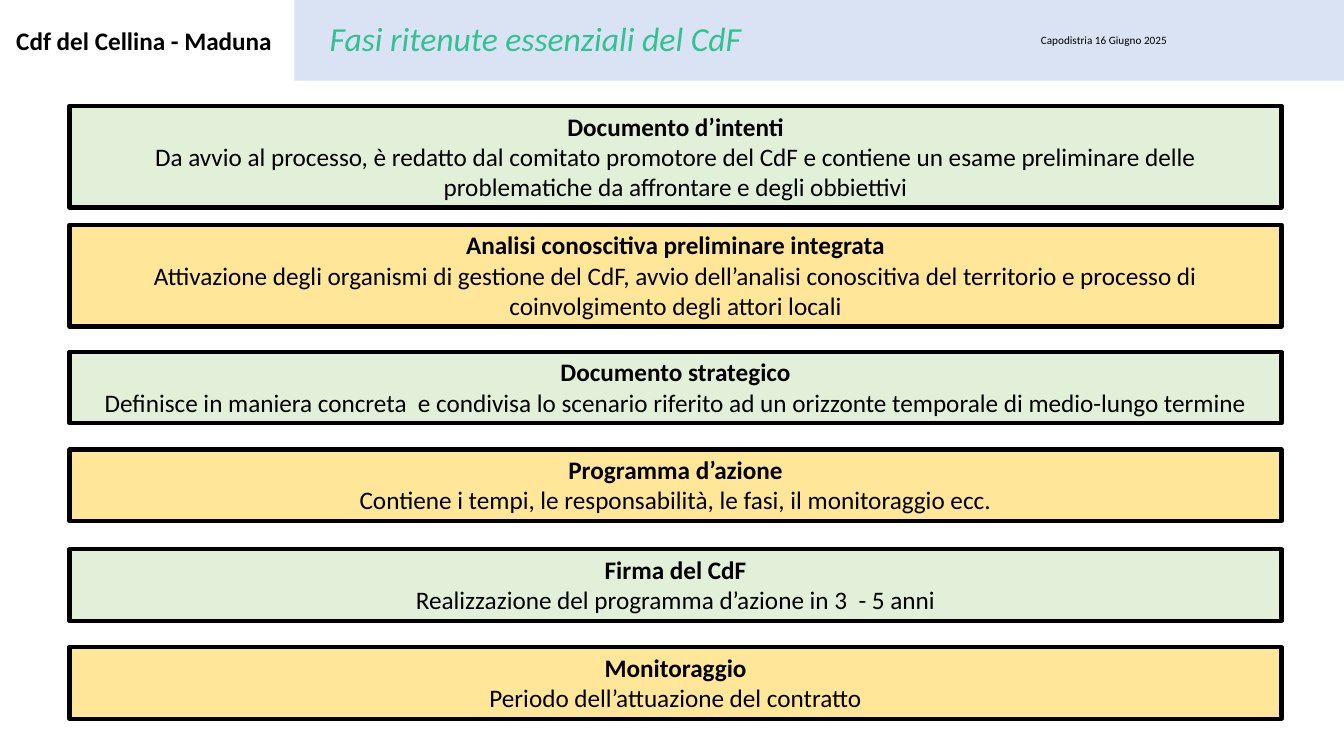
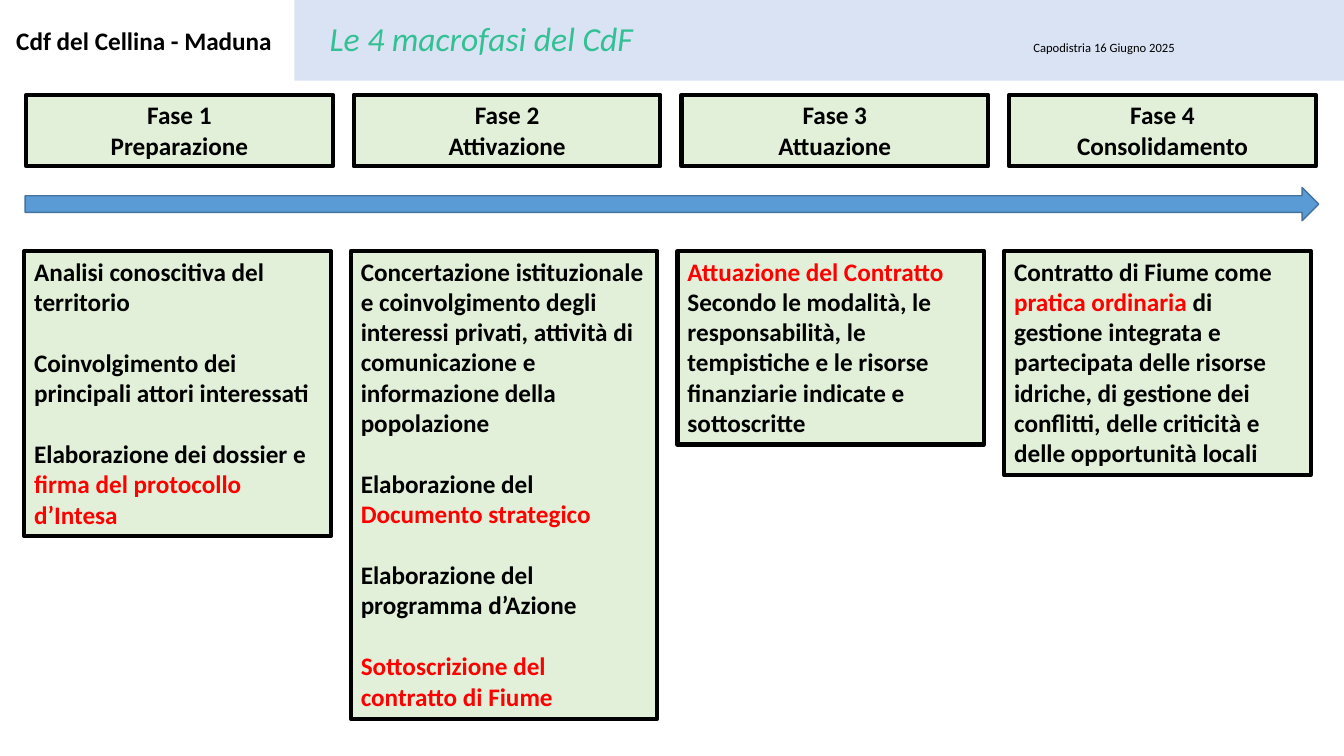
from dataclasses import dataclass
from typing import NamedTuple

from pptx import Presentation
from pptx.dml.color import RGBColor
from pptx.enum.shapes import MSO_SHAPE as SHAPE
from pptx.enum.text import MSO_ANCHOR as ANCHOR, MSO_AUTO_SIZE as AUTO, PP_ALIGN as ALIGN
from pptx.util import Inches, Pt

FONT = "Calibri"
BLACK = "000000"
RED = "FF0000"
TEAL = "32C094"
BAND = "DAE3F3"
GREEN = "E2F0D9"
YELLOW = "FFE699"
ARROW = "5B9BD5"
ARROW_EDGE = "43739E"

BAND_LEFT, BAND_SPLIT, BAND_RIGHT, BAND_HEIGHT = 2.92, 8.57, 13.33, 0.8
PHASE_WIDTH = 3.04
BLANK_LINE = 22


class Run(NamedTuple):
    text: str
    color: str = BLACK
    bold: bool = True


class Box(NamedTuple):
    left: float
    top: float
    width: float
    height: float


@dataclass
class Step:
    top: float
    height: float
    title: str
    detail: str


@dataclass
class Phase:
    name: str
    height: float
    paragraphs: list[list[Run]]
    gap: float = 0


STEPS = [
    Step(1.05, 1.01, "Documento d’intenti",
         "Da avvio al processo, è redatto dal comitato promotore del CdF e contiene "
         "un esame preliminare delle problematiche da affrontare e degli obbiettivi"),
    Step(2.23, 1.01, "Analisi conoscitiva preliminare integrata",
         "Attivazione degli organismi di gestione del CdF, avvio dell’analisi conoscitiva "
         "del territorio e processo di coinvolgimento degli attori locali"),
    Step(3.49, 0.71, "Documento strategico",
         "Definisce in maniera concreta  e condivisa lo scenario riferito ad un orizzonte "
         "temporale di medio-lungo termine"),
    Step(4.46, 0.71, "Programma d’azione",
         "Contiene i tempi, le responsabilità, le fasi, il monitoraggio ecc."),
    Step(5.45, 0.71, "Firma del CdF", "Realizzazione del programma d’azione in 3  - 5 anni"),
    Step(6.42, 0.71, "Monitoraggio", "Periodo dell’attuazione del contratto"),
]

PHASES = [
    Phase("Preparazione", 2.83, [
        [Run("Analisi conoscitiva del territorio")],
        [Run("Coinvolgimento dei principali attori interessati")],
        [Run("Elaborazione dei dossier e "), Run("firma del protocollo d’Intesa", RED)],
    ], BLANK_LINE),
    Phase("Attivazione", 4.64, [
        [Run("Concertazione istituzionale e coinvolgimento degli interessi privati, "
             "attività di comunicazione e informazione della popolazione")],
        [Run("Elaborazione del "), Run("Documento strategico", RED)],
        [Run("Elaborazione del programma d’Azione")],
        [Run("Sottoscrizione del contratto di Fiume", RED)],
    ], BLANK_LINE),
    Phase("Attuazione", 1.92, [
        [Run("Attuazione del Contratto", RED)],
        [Run("Secondo le modalità, le responsabilità, le tempistiche e le risorse "
             "finanziarie indicate e sottoscritte")],
    ]),
    Phase("Consolidamento", 2.22, [
        [Run("Contratto di Fiume come "), Run("pratica ordinaria ", RED),
         Run("di gestione integrata e partecipata delle risorse idriche, di gestione dei "
             "conflitti, delle criticità e delle opportunità locali")],
    ]),
]


def rgb(color: str) -> RGBColor:
    return RGBColor.from_string(color)


def write(sp, paragraphs: list[list[Run]], *, size: float = 18, italic: bool = False,
          align=ALIGN.LEFT, anchor=ANCHOR.TOP, wrap: bool = True, grow: bool = True,
          gap: float = 0) -> None:
    tf = sp.text_frame
    tf.word_wrap = wrap
    tf.auto_size = AUTO.SHAPE_TO_FIT_TEXT if grow else AUTO.NONE
    tf.vertical_anchor = anchor
    for i, runs in enumerate(paragraphs):
        p = tf.add_paragraph() if i else tf.paragraphs[0]
        p.alignment = align
        if i and gap:
            p.space_before = Pt(gap)
        for run in runs:
            r = p.add_run()
            r.text = run.text
            r.font.name = FONT
            r.font.size = Pt(size)
            r.font.bold = run.bold
            r.font.italic = italic
            r.font.color.rgb = rgb(run.color)


def add_block(s, box: Box, fill: str, *, line: str | None = None, line_width: float = 3,
              kind=SHAPE.RECTANGLE):
    sp = s.shapes.add_shape(kind, *map(Inches, box))
    sp.shadow.inherit = False
    sp.fill.solid()
    sp.fill.fore_color.rgb = rgb(fill)
    if line:
        sp.line.color.rgb = rgb(line)
        sp.line.width = Pt(line_width)
    else:
        sp.line.fill.background()
    return sp


def add_label(s, box: Box, run: Run, **style) -> None:
    write(s.shapes.add_textbox(*map(Inches, box)), [[run]], **style)


def add_slide(prs, title: str, *, date_size: float, date_inset: float = 0.05):
    s = prs.slides.add_slide(prs.slide_layouts[6])
    date = add_block(s, Box(BAND_SPLIT, 0, BAND_RIGHT - BAND_SPLIT, BAND_HEIGHT), BAND)
    date.text_frame.margin_top = Inches(date_inset)
    write(date, [[Run("Capodistria 16 Giugno 2025", bold=False)]], size=date_size,
          align=ALIGN.CENTER, anchor=ANCHOR.MIDDLE, grow=False)
    add_block(s, Box(BAND_LEFT, 0, BAND_SPLIT - BAND_LEFT, BAND_HEIGHT), BAND)
    add_label(s, Box(3.17, 0.13, 5.29, 0.5), Run(title, TEAL, False),
              size=24, italic=True, anchor=ANCHOR.BOTTOM)
    add_label(s, Box(0.05, 0.2, 2.76, 0.4), Run("Cdf del Cellina - Maduna"),
              align=ALIGN.CENTER, wrap=False)
    return s


def build_steps(prs) -> None:
    s = add_slide(prs, "Fasi ritenute essenziali del CdF", date_size=8)
    for i, step in enumerate(STEPS):
        sp = add_block(s, Box(0.69, step.top, 12.02, step.height),
                       YELLOW if i % 2 else GREEN, line=BLACK)
        write(sp, [[Run(step.title)], [Run(step.detail, bold=False)]], align=ALIGN.CENTER)


def build_phases(prs) -> None:
    s = add_slide(prs, "Le 4 macrofasi del CdF", date_size=9, date_inset=0.2)
    for i, phase in enumerate(PHASES):
        head = add_block(s, Box(0.26 + 3.25 * i, 0.94, PHASE_WIDTH, 0.71), GREEN, line=BLACK)
        write(head, [[Run(f"Fase {i + 1}")], [Run(phase.name)]], align=ALIGN.CENTER)
        body = add_block(s, Box(0.24 + 3.24 * i, 2.49, PHASE_WIDTH, phase.height),
                         GREEN, line=BLACK)
        write(body, phase.paragraphs, gap=phase.gap)
    add_block(s, Box(0.25, 1.86, 12.83, 0.33), ARROW, line=ARROW_EDGE, line_width=1,
              kind=SHAPE.RIGHT_ARROW)


def main() -> None:
    prs = Presentation()
    prs.slide_width = Inches(13.33)
    prs.slide_height = Inches(7.5)
    build_steps(prs)
    build_phases(prs)
    prs.save("out.pptx")


if __name__ == "__main__":
    main()
